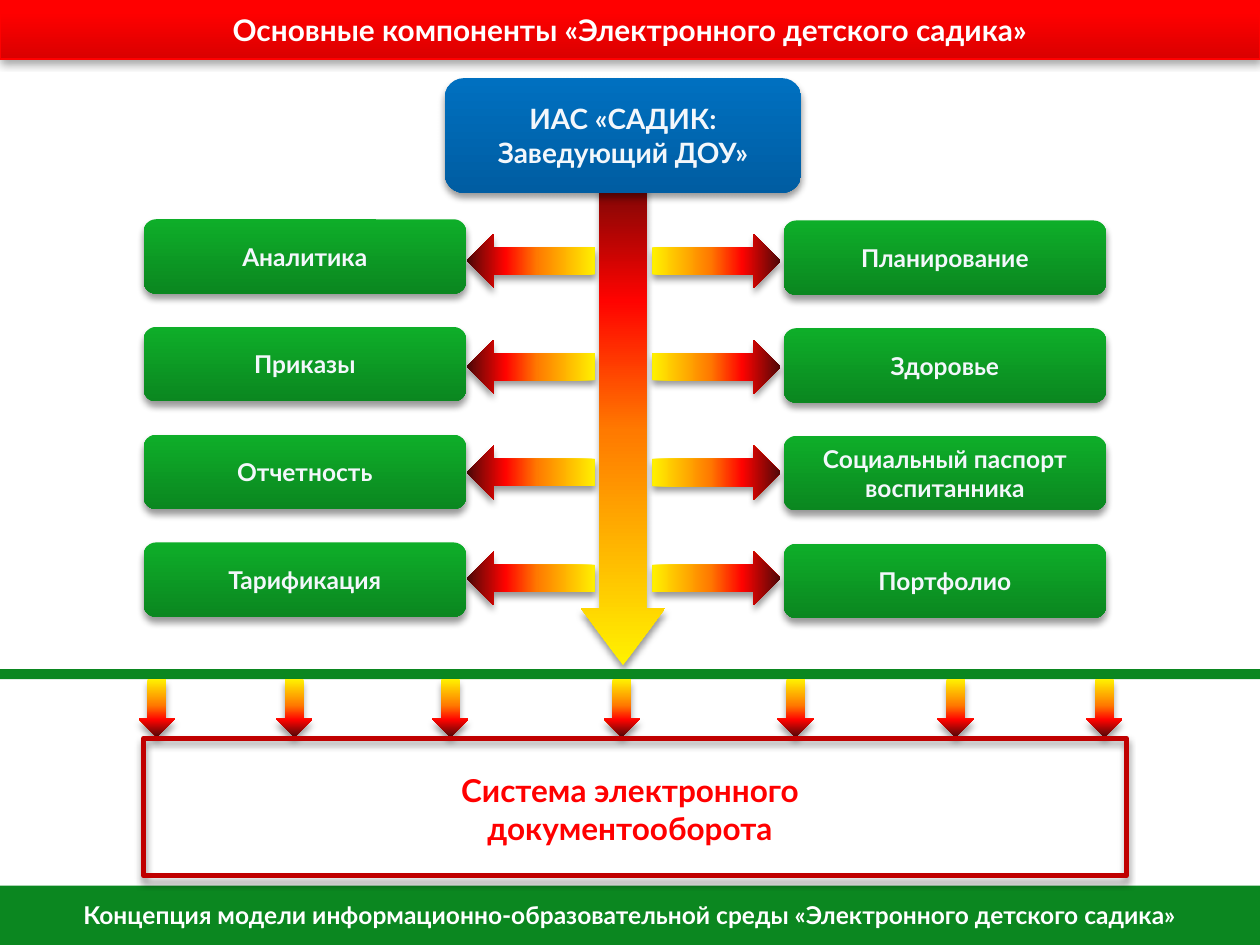
import dataclasses

import lxml.etree
import pptx
import pptx.dml.color
import pptx.enum.shapes
import pptx.enum.text
import pptx.oxml.ns
import pptx.util

SHAPES = pptx.enum.shapes.MSO_SHAPE
SLIDE_WIDTH = pptx.util.Inches(10)
SLIDE_HEIGHT = pptx.util.Inches(7.5)
COLUMNS, ROWS = 100, 75
DOWNWARD, UPWARD = 270, 90


@dataclasses.dataclass(frozen=True)
class Theme:
    font: str = "Lato"
    white: str = "FFFFFF"
    pale: str = "F3F7FB"
    red: str = "FF0000"
    frame: str = "C00000"
    green: str = "0B8720"
    shadow: str = "000000"
    module_fill: tuple = ((0, "0EAE29"), (100, "0B8720"))
    system_fill: tuple = ((0, "0070C0"), (100, "005DA2"))
    title_fill: tuple = ((0, "DA0000"), (80, "FF0000"), (100, "FF0000"))
    arrow_fill: tuple = ((0, "FFF200"), (45, "FF7A00"), (70, "FF0300"), (100, "4D0808"))
    module_size: int = 14
    system_size: int = 16
    title_size: int = 17
    documents_size: int = 18


THEME = Theme()


def color(value):
    return pptx.dml.color.RGBColor.from_string(value)


def place(left, top, width, height):
    return (
        round(SLIDE_WIDTH * left / COLUMNS),
        round(SLIDE_HEIGHT * top / ROWS),
        round(SLIDE_WIDTH * width / COLUMNS),
        round(SLIDE_HEIGHT * height / ROWS),
    )


def add_child(parent, tag, **attributes):
    child = lxml.etree.SubElement(parent, pptx.oxml.ns.qn(tag))
    for name, value in attributes.items():
        child.set(name, str(value))
    return child


def add_plain(slide, kind, area):
    shape = slide.shapes.add_shape(kind, *place(*area))
    shape.shadow.inherit = False
    shape.fill.background()
    shape.line.fill.background()
    return shape


def add_band(slide, area):
    band = add_plain(slide, SHAPES.RECTANGLE, area)
    band.fill.solid()
    band.fill.fore_color.rgb = color(THEME.green)


def set_gradient(shape, stops, angle):
    shape.fill.gradient()
    shape.fill.gradient_angle = angle
    stop_list = shape._element.spPr.find(".//" + pptx.oxml.ns.qn("a:gsLst"))
    for stop in list(stop_list):
        stop_list.remove(stop)
    for position, value in stops:
        stop = add_child(stop_list, "a:gs", pos=position * 1000)
        add_child(stop, "a:srgbClr", val=value)


def set_shadow(shape, opacity=40, blur=4, distance=3):
    effects = shape._element.spPr.find(pptx.oxml.ns.qn("a:effectLst"))
    shadow = add_child(
        effects, "a:outerShdw", blurRad=pptx.util.Pt(blur), dist=pptx.util.Pt(distance),
        dir=5400000, rotWithShape=0,
    )
    shade = add_child(shadow, "a:srgbClr", val=THEME.shadow)
    add_child(shade, "a:alpha", val=opacity * 1000)


def set_outline(shape, value, width):
    shape.line.color.rgb = color(value)
    shape.line.width = pptx.util.Pt(width)


def write(shape, text, size, value, anchor=pptx.enum.text.MSO_ANCHOR.MIDDLE):
    frame = shape.text_frame
    frame.word_wrap = True
    frame.vertical_anchor = anchor
    paragraph = frame.paragraphs[0]
    paragraph.alignment = pptx.enum.text.PP_ALIGN.CENTER
    run = paragraph.add_run()
    run.text = text
    run.font.name = THEME.font
    run.font.size = pptx.util.Pt(size)
    run.font.bold = True
    run.font.color.rgb = color(value)


def add_label(slide, area, text, size, value):
    label = slide.shapes.add_textbox(*place(*area))
    write(label, text, size, value, pptx.enum.text.MSO_ANCHOR.TOP)
    label.text_frame.auto_size = pptx.enum.text.MSO_AUTO_SIZE.SHAPE_TO_FIT_TEXT


def add_arrow(slide, area, rotation=0, angle=DOWNWARD):
    arrow = add_plain(slide, SHAPES.DOWN_ARROW, area)
    arrow.rotation = rotation
    set_gradient(arrow, THEME.arrow_fill, angle)
    set_shadow(arrow)
    return arrow


def add_card(slide, area, text, size, stops):
    card = add_plain(slide, SHAPES.FLOWCHART_ALTERNATE_PROCESS, area)
    set_gradient(card, stops, DOWNWARD)
    set_shadow(card)
    write(card, text, size, THEME.pale)


def add_title(slide, text):
    title = add_plain(slide, SHAPES.RECTANGLE, (0, 0, COLUMNS, 4.7))
    set_gradient(title, THEME.title_fill, UPWARD)
    set_outline(title, THEME.red, 0.75)
    set_shadow(title, opacity=35, blur=5, distance=1.8)
    write(title, text, THEME.title_size, THEME.white)


def add_modules(slide, left, top, arrow_left, rotation, names):
    for row, name in enumerate(names):
        add_arrow(slide, (arrow_left, 15.6 + 8.4 * row, 4.3, 10.2), rotation)
        add_card(slide, (left, top + 8.55 * row, 25.6, 5.9), name,
                 THEME.module_size, THEME.module_fill)


def add_system(slide):
    trunk = add_arrow(slide, (46.1, 11.5, 6.7, 41.3), angle=UPWARD)
    trunk.adjustments[0] = 0.549
    trunk.adjustments[1] = 0.676
    add_card(slide, (35.3, 6.2, 28.3, 9.1), "ИАС «САДИК: Заведующий ДОУ»",
             THEME.system_size, THEME.system_fill)


def add_documents(slide):
    add_band(slide, (0, 53.1, COLUMNS, 0.8))
    for left in (11, 21.9, 34.3, 47.9, 61.7, 74.4, 86.2):
        add_arrow(slide, (left, 53.9, 2.9, 4.6))
    frame = add_plain(slide, SHAPES.RECTANGLE, (11.4, 58.6, 78, 10.9))
    set_outline(frame, THEME.frame, 3)
    set_shadow(frame)
    add_label(slide, (25, 60.7, 50, 7.1), "Система электронного документооборота",
              THEME.documents_size, THEME.red)


def add_footer(slide, text):
    add_band(slide, (0, 70.3, COLUMNS, 4.7))
    add_label(slide, (0, 70.9, COLUMNS, 3.4), text, THEME.module_size, THEME.white)


def main():
    presentation = pptx.Presentation()
    presentation.slide_width = SLIDE_WIDTH
    presentation.slide_height = SLIDE_HEIGHT
    slide = presentation.slides.add_slide(presentation.slide_layouts[6])
    add_modules(slide, 11.4, 17.4, 40, 90,
                ("Аналитика", "Приказы", "Отчетность", "Тарификация"))
    add_modules(slide, 62.2, 17.5, 54.7, 270,
                ("Планирование", "Здоровье", "Социальный паспорт воспитанника", "Портфолио"))
    add_system(slide)
    add_footer(slide, "Концепция модели информационно-образовательной среды "
                      "«Электронного детского садика»")
    add_title(slide, "Основные компоненты «Электронного детского садика»")
    add_documents(slide)
    presentation.save("out.pptx")


if __name__ == "__main__":
    main()
